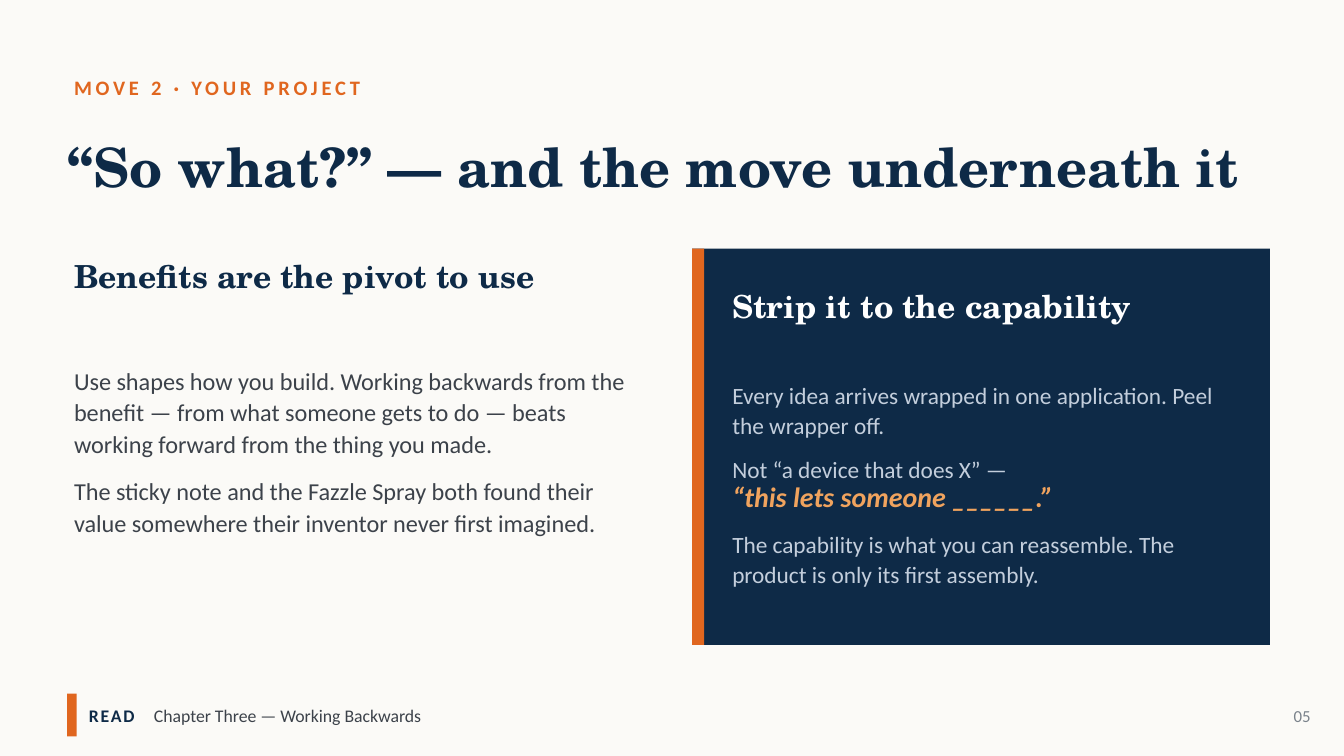
from lxml import etree
from pptx import Presentation
from pptx.dml.color import RGBColor
from pptx.enum.shapes import MSO_SHAPE
from pptx.enum.text import MSO_ANCHOR, PP_ALIGN
from pptx.oxml.ns import qn
from pptx.util import Cm, Pt

RECT = MSO_SHAPE.RECTANGLE
MIDDLE = MSO_ANCHOR.MIDDLE
LEFT, RIGHT = PP_ALIGN.LEFT, PP_ALIGN.RIGHT
SERIF, SANS = "TeX Gyre Schola", "Calibri"
COLORS = {
    "paper": "FBFAF7", "navy": "0E2A47", "orange": "E0661F", "ink": "3C424A",
    "white": "FFFFFF", "mist": "C3CEDC", "amber": "F0A35E", "gray": "7A828B",
}

# Each paragraph is a list of (text, format changes) runs, then its space after.
LABEL = [([("MOVE 2 · YOUR PROJECT", {})], 0)]
TITLE = [([("“So what?” — and the move underneath it", {})], 0)]
USE_HEAD = [([("Benefits are the pivot to use", {})], 0)]
USE_BODY = [
    ([("Use shapes how you build. Working backwards from the benefit — from what "
       "someone gets to do — beats working forward from the thing you made.", {})], 8),
    ([("The sticky note and the Fazzle Spray both found their value somewhere "
       "their inventor never first imagined.", {})], 0),
]
CARD_HEAD = [([("Strip it to the capability", {})], 0)]
CARD_BODY = [
    ([("Every idea arrives wrapped in one application. Peel the wrapper off.", {})], 8),
    ([("Not “a device that does X” —", {})], 0),
    ([("“this lets someone ______.”",
       {"size": 15, "color": "amber", "bold": True, "italic": True})], 8),
    ([("The capability is what you can reassemble. "
       "The product is only its first assembly.", {})], 0),
]
FOOTER = [([("READ\t", {"color": "navy", "bold": True, "track": 1}),
            ("Chapter Three — Working Backwards", {})], 0)]
PAGE = [([("05", {})], 0)]

# Layout in centimetres
EDGE, INDENT = 1.27, 1.4
TOP = 4.7
CARD_X, CARD_W, CARD_H = 13.08, 10.92, 7.49
CARD_IN = CARD_X + 0.76
FOOT_Y, FOOT_H = 13.11, 0.81

deck = Presentation()
deck.slide_width, deck.slide_height = Cm(25.4), Cm(14.29)
slide = deck.slides.add_slide(deck.slide_layouts[6])


def rgb(name):
    return RGBColor.from_string(COLORS[name])


def style(run, size, color, font=SANS, bold=False, italic=False, track=0):
    face = run.font
    face.name, face.size = font, Pt(size)
    face.bold, face.italic = bold, italic
    face.color.rgb = rgb(color)
    if track:
        run._r.get_or_add_rPr().set("spc", str(track * 100))


def write(paras, x, y, w, h, line=None, align=LEFT, inset=0, tab=None, **base):
    """Add a text box; base is the format that runs may override."""
    frame = slide.shapes.add_textbox(Cm(x), Cm(y), Cm(w), Cm(h)).text_frame
    frame.word_wrap = True
    frame.vertical_anchor = MIDDLE
    frame.margin_left = frame.margin_right = Cm(inset)
    frame.margin_top = frame.margin_bottom = 0
    for i, (runs, after) in enumerate(paras):
        para = frame.add_paragraph() if i else frame.paragraphs[0]
        para.alignment = align
        para.space_after = Pt(after)
        if line:
            para.line_spacing = Pt(line)
        if tab:
            stops = etree.SubElement(para._p.get_or_add_pPr(), qn("a:tabLst"))
            etree.SubElement(stops, qn("a:tab"), pos=str(Cm(tab)), algn="l")
        for text, change in runs:
            run = para.add_run()
            run.text = text
            style(run, **{**base, **change})


def block(x, y, w, h, color):
    shape = slide.shapes.add_shape(RECT, Cm(x), Cm(y), Cm(w), Cm(h))
    shape.shadow.inherit = False
    shape.fill.solid()
    shape.fill.fore_color.rgb = rgb(color)
    shape.line.fill.background()


back = slide.background.fill
back.solid()
back.fore_color.rgb = rgb("paper")

head = {"size": 17, "font": SERIF, "bold": True}
write(LABEL, INDENT, EDGE, 15.24, 0.76, size=11, color="orange", bold=True, track=2)
write(TITLE, EDGE, 2.08, 22.86, 2.29, line=29.6,
      size=29, color="navy", font=SERIF, bold=True)

write(USE_HEAD, INDENT, TOP, 10.67, 1.02, color="navy", **head)
write(USE_BODY, INDENT, 5.97, 10.54, 5.08, line=17, size=13, color="ink")

block(CARD_X, TOP, CARD_W, CARD_H, "navy")
block(CARD_X, TOP, 0.23, CARD_H, "orange")
write(CARD_HEAD, CARD_IN, 5.28, 9.65, 1.02, color="white", **head)
write(CARD_BODY, CARD_IN, 6.6, 9.65, 5.08, line=16, size=12.5, color="mist")

block(EDGE, FOOT_Y, 0.18, FOOT_H, "orange")
write(FOOTER, 1.68, 13.03, 15.75, 0.97, tab=1.23, size=9.5, color="ink")
write(PAGE, 23.75, 13.16, 1.27, 0.76, align=RIGHT, inset=0.25, size=9, color="gray")

deck.save("out.pptx")
